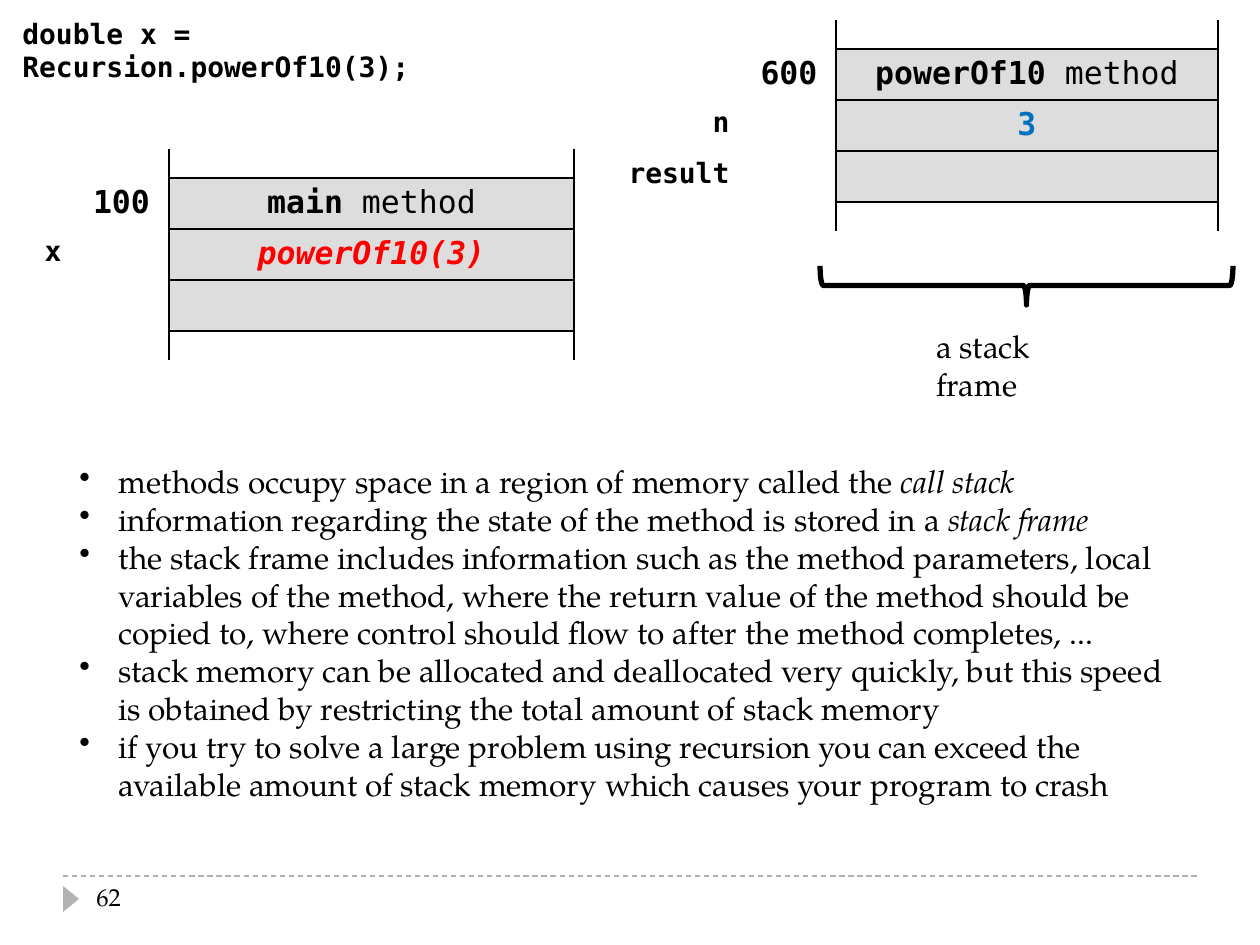
"""Build the slide on stack frames during a recursive call."""
import pptx
import pptx.util
import pptx.dml.color
import pptx.enum.dml
import pptx.enum.shapes
import pptx.enum.text
from lxml import etree
from pptx.oxml.ns import qn

RGBColor = pptx.dml.color.RGBColor
Pt = pptx.util.Pt
BLACK = RGBColor(0x00, 0x00, 0x00)
GRAY = RGBColor(0xB2, 0xB2, 0xB2)
CELL_GRAY = RGBColor(0xDD, 0xDD, 0xDD)
BLUE = RGBColor(0x00, 0x70, 0xC0)
RED = RGBColor(0xFF, 0x00, 0x00)
MONO, SERIF = "DejaVu Sans Mono", "TeX Gyre Pagella"
NO_STYLE = "{2D5ABB26-0587-4C30-8999-92F81FD0307C}"
CENTER = pptx.enum.text.PP_ALIGN.CENTER
RIGHT = pptx.enum.text.PP_ALIGN.RIGHT
SCALE = 914400 // 126

ROW_HEIGHTS = [29, 51, 51, 51, 29]
FRAMES = [
    {
        "at": (595, 20), "cols": [147, 94, 382],
        "address": "600", "method": "powerOf10",
        "variables": [("n", "3", BLUE, False), ("result", "", BLACK, False)],
    },
    {
        "at": (7, 149), "cols": [67, 95, 405],
        "address": "100", "method": "main",
        "variables": [("x", "powerOf10(3)", RED, True), ("", "", BLACK, False)],
    },
]
NOTES = [
    [("methods occupy space in a region of memory called the ", False), ("call stack", True)],
    [("information regarding the state of the method is stored in a ", False),
     ("stack frame", True)],
    [("the stack frame includes information such as the method parameters, local variables "
      "of the method, where the return value of the method should be copied to, where "
      "control should flow to after the method completes, ...", False)],
    [("stack memory can be allocated and deallocated very quickly, but this speed is "
      "obtained by restricting the total amount of stack memory", False)],
    [("if you try to solve a large problem using recursion you can exceed the available "
      "amount of stack memory which causes your program to crash", False)],
]
LABELS = [
    ("62", (84, 876, 273, 50), SERIF, 14, False),
    ("double x = Recursion.powerOf10(3);", (10, 10, 551, 47), MONO, 16, True),
    ("a stack frame", (924, 321, 205, 50), SERIF, 18, False),
]


def px(n):
    return pptx.util.Emu(n * SCALE)


def set_font(font, name, size, color=BLACK, bold=None, italic=None):
    font.name, font.size, font.bold, font.italic = name, Pt(size), bold, italic
    font.color.rgb = color


def add_text_frame(slide, box):
    tf = slide.shapes.add_textbox(*map(px, box)).text_frame
    tf.word_wrap = True
    return tf


def add_label(slide, text, box, name, size, bold):
    p = add_text_frame(slide, box).paragraphs[0]
    p.text = text
    set_font(p.font, name, size, bold=bold)


def add_notes(slide, box):
    tf = add_text_frame(slide, box)
    for i, runs in enumerate(NOTES):
        p = tf.paragraphs[0] if i == 0 else tf.add_paragraph()
        set_font(p.font, SERIF, 18)
        pPr = p._p.get_or_add_pPr()
        pPr.set("marL", str(px(39)))
        pPr.set("indent", str(px(-39)))
        bullet = etree.Element(qn("a:buChar"), char="•")
        pPr.insert(0, bullet)
        for text, italic in runs:
            r = p.add_run()
            r.text, r.font.italic = text, italic


def add_borders(cell, sides):
    tcPr = cell._tc.get_or_add_tcPr()
    for side in sides:
        ln = etree.SubElement(tcPr, qn("a:ln" + side), w=str(Pt(1)))
        fill = etree.SubElement(ln, qn("a:solidFill"))
        etree.SubElement(fill, qn("a:srgbClr"), val=str(BLACK))


def fill_cell(cell, text, size, align, color=BLACK, italic=None):
    p = cell.text_frame.paragraphs[0]
    p.alignment = align
    set_font(p.font, MONO, size, color, True, italic)
    if text:
        p.text = text
    else:
        etree.SubElement(p._p, qn("a:endParaRPr"), sz=str(size * 100))


def add_frame(slide, frame):
    cols = frame["cols"]
    size = (sum(cols), sum(ROW_HEIGHTS))
    shape = slide.shapes.add_table(len(ROW_HEIGHTS), len(cols), *map(px, frame["at"] + size))
    table = shape.table
    table.first_row = table.horz_banding = False
    next(shape._element.iter(qn("a:tableStyleId"))).text = NO_STYLE
    for column, width in zip(table.columns, cols):
        column.width = px(width)
    variables = frame["variables"]
    names = ["", ""] + [v[0] for v in variables] + [""]
    addresses = ["", frame["address"], "", "", ""]
    borders = ["LRB", "LRTB", "LRTB", "LRTB", "LRT"]
    for i, height in enumerate(ROW_HEIGHTS):
        table.rows[i].height = px(height)
        name, address, value = (table.cell(i, j) for j in range(3))
        add_borders(address, "R")
        add_borders(value, borders[i])
        for cell in (name, address, value):
            cell.fill.background()
        if 0 < i < len(ROW_HEIGHTS) - 1:
            value.fill.solid()
            value.fill.fore_color.rgb = CELL_GRAY
        fill_cell(name, names[i], 16 if names[i] else 6, RIGHT)
        fill_cell(address, addresses[i], 18 if addresses[i] else 6, CENTER)
        if i != 1:
            text, color, italic = variables[i - 2][1:] if i in (2, 3) else ("", BLACK, False)
            fill_cell(value, text, 18 if text else 6, CENTER, color, italic)
    title = table.cell(1, 2).text_frame.paragraphs[0]
    title.alignment = CENTER
    set_font(title.font, MONO, 18)
    for text, bold in ((frame["method"] + " ", True), ("method", False)):
        r = title.add_run()
        r.text, r.font.bold = text, bold


def add_rotated(slide, kind, box):
    s = slide.shapes.add_shape(kind, *map(px, box))
    s.rotation = 90
    s.shadow.inherit = False
    return s


def add_footer(slide):
    line = slide.shapes.add_connector(
        pptx.enum.shapes.MSO_CONNECTOR.STRAIGHT, *map(px, (63, 876, 1197, 876)))
    line.line.color.rgb = GRAY
    line.line.width = Pt(0.75)
    line.line.dash_style = pptx.enum.dml.MSO_LINE.DASH
    etree.SubElement(line._element.spPr, qn("a:effectLst"))
    marker = add_rotated(
        slide, pptx.enum.shapes.MSO_SHAPE.ISOSCELES_TRIANGLE, (58, 891, 26, 16))
    marker.fill.solid()
    marker.fill.fore_color.rgb = GRAY
    marker.line.fill.background()


def main():
    prs = pptx.Presentation()
    prs.slide_width, prs.slide_height = px(1260), px(945)
    slide = prs.slides.add_slide(prs.slide_layouts[6])
    add_footer(slide)
    for frame in FRAMES:
        add_frame(slide, frame)
    brace = add_rotated(slide, pptx.enum.shapes.MSO_SHAPE.RIGHT_BRACE, (1007, 79, 39, 413))
    brace.fill.background()
    brace.line.color.rgb = BLACK
    brace.line.width = Pt(3)
    add_notes(slide, (67, 456, 1119, 357))
    for label in LABELS:
        add_label(slide, *label)
    prs.save("out.pptx")


if __name__ == "__main__":
    main()
